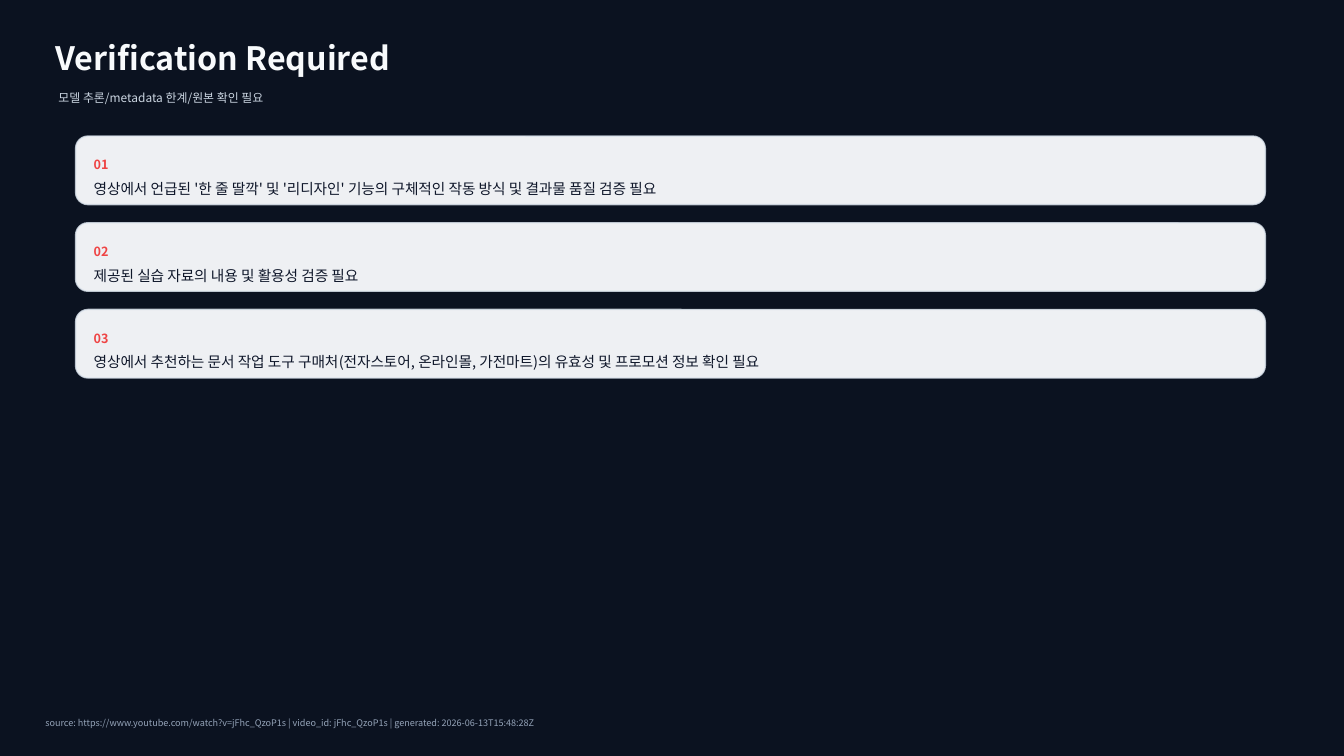
from lxml.etree import SubElement
from pptx import Presentation
from pptx.dml.color import RGBColor
from pptx.enum.shapes import MSO_SHAPE
from pptx.enum.text import MSO_ANCHOR
from pptx.oxml.ns import qn
from pptx.util import Pt

SCALE = 9144
FACE = "Noto Sans CJK KR"
COLORS = {
    "back": "0B1220",
    "title": "F8FAFC",
    "sub": "CBD5E1",
    "card": "F8FAFC",
    "edge": "D7E0EA",
    "mark": "EF4444",
    "ink": "0F172A",
    "foot": "94A3B8",
}
FORMATS = {
    "title": {"size": Pt(23), "bold": True},
    "sub": {"size": Pt(8.5), "bold": False},
    "mark": {"size": Pt(9), "bold": True},
    "ink": {"size": Pt(10.5), "bold": False},
    "foot": {"size": Pt(6.5), "bold": False},
}
FRAME = {
    "margin_left": 0,
    "margin_top": 0,
    "margin_right": 0,
    "margin_bottom": 0,
    "word_wrap": True,
    "vertical_anchor": MSO_ANCHOR.MIDDLE,
}
CHECKS = [
    "영상에서 언급된 '한 줄 딸깍' 및 '리디자인' 기능의 구체적인 작동 방식 및 결과물 품질 검증 필요",
    "제공된 실습 자료의 내용 및 활용성 검증 필요",
    "영상에서 추천하는 문서 작업 도구 구매처(전자스토어, 온라인몰, 가전마트)의 유효성 및 프로모션 정보 확인 필요",
]


def px(*sizes):
    return [size * SCALE for size in sizes]


def assign(target, values):
    for name, value in values.items():
        setattr(target, name, value)


class Painter:
    def __init__(self, slide):
        self.slide = slide
        self.paint(slide.background.fill, "back")

    def paint(self, fill, color, alpha=100):
        fill.solid()
        fill.fore_color.rgb = RGBColor.from_string(COLORS[color])
        if alpha < 100:
            node = fill._xPr.find(qn("a:solidFill"))[0]
            SubElement(node, qn("a:alpha"), val=str(alpha * 1000))

    def text(self, box, words, style):
        frame = self.slide.shapes.add_textbox(*px(*box)).text_frame
        assign(frame, FRAME)
        run = frame.paragraphs[0].add_run()
        run.text = words
        assign(run.font, {"name": FACE, **FORMATS[style]})
        self.paint(run.font.fill, style)
        SubElement(run.font._element, qn("a:ea"), typeface=FACE)

    def panel(self, box):
        shape = self.slide.shapes.add_shape(MSO_SHAPE.ROUNDED_RECTANGLE, *px(*box))
        shape.shadow.inherit = False
        shape.adjustments[0] = 0.18
        self.paint(shape.fill, "card", 96)
        shape.line.width = Pt(1)
        self.paint(shape.line.fill, "edge", 80)

    def card(self, top, mark, words):
        self.panel((75, top, 1180, 68))
        self.text((93, top + 16, 1144, 25), mark, "mark")
        self.text((93, top + 50, 1144, 4), words, "ink")


def main():
    deck = Presentation()
    deck.slide_width, deck.slide_height = px(1333, 750)
    painter = Painter(deck.slides.add_slide(deck.slide_layouts[6]))
    painter.text((55, 35, 1200, 45), "Verification Required", "title")
    painter.text((58, 83, 1150, 28), "모델 추론/metadata 한계/원본 확인 필요", "sub")
    for index, words in enumerate(CHECKS):
        painter.card(135 + 86 * index, f"{index + 1:02}", words)
    painter.text(
        (45, 705, 1240, 25),
        "source: https://www.youtube.com/watch?v=jFhc_QzoP1s"
        " | video_id: jFhc_QzoP1s | generated: 2026-06-13T15:48:28Z",
        "foot",
    )
    deck.save("out.pptx")


if __name__ == "__main__":
    main()
